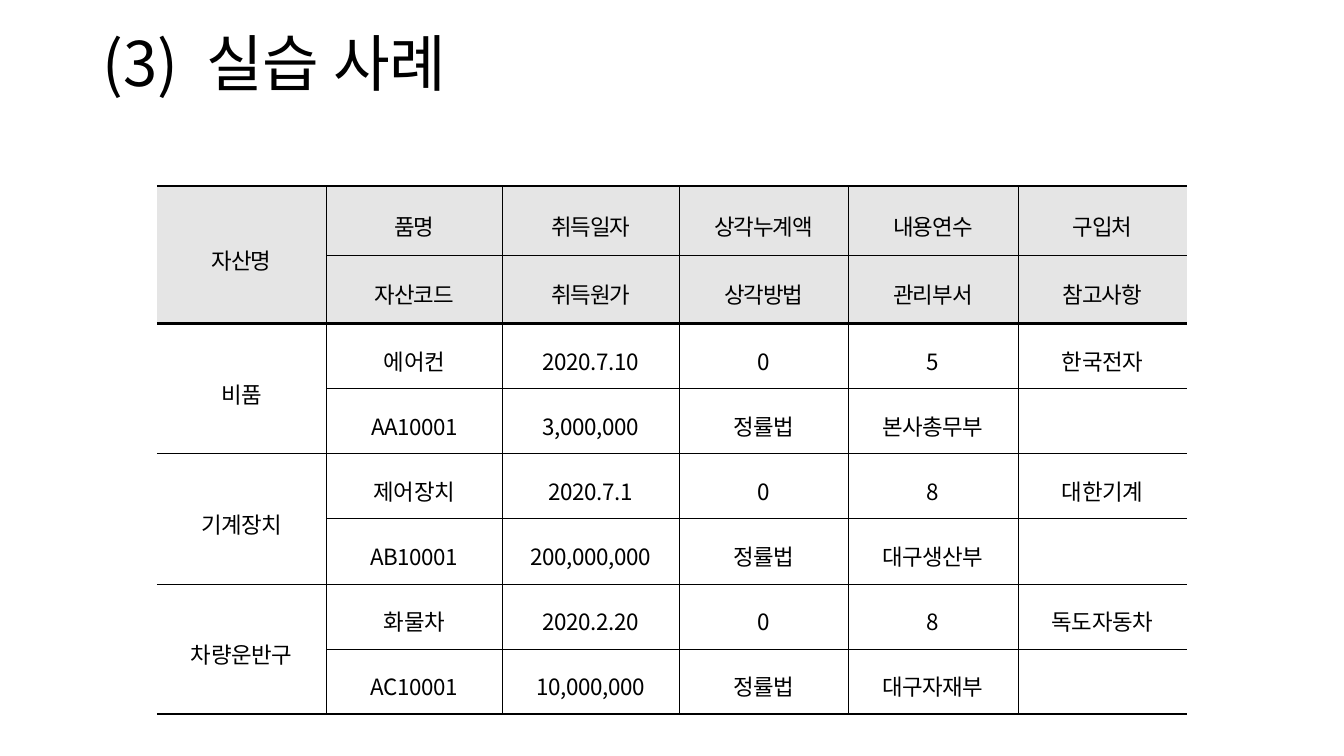
from dataclasses import dataclass

from lxml import etree
from pptx import Presentation
from pptx.dml.color import RGBColor
from pptx.enum.text import MSO_ANCHOR, PP_ALIGN
from pptx.oxml.ns import qn
from pptx.util import Pt

ANCHOR_TOP, ANCHOR_MIDDLE = MSO_ANCHOR.TOP, MSO_ANCHOR.MIDDLE
ALIGN_CENTER = PP_ALIGN.CENTER
BLANK_LAYOUT = 6


@dataclass(frozen=True)
class Theme:
    font: str = "Noto Sans CJK KR"
    ink: str = "000000"
    header_fill: str = "E5E5E5"
    body_fill: str = "FFFFFF"
    title_size: float = 44
    table_size: float = 16
    thin: float = 0.28
    frame: float = 1.7
    header_rule: float = 1.98


@dataclass(frozen=True)
class AssetGroup:
    """One asset name beside two rows of details."""
    name: str
    upper: tuple[str, ...]
    lower: tuple[str, ...]
    fill: str
    row_height: float
    spacing: float


THEME = Theme()
HEADER = (THEME.header_fill, 49, -0.7)
BODY = (THEME.body_fill, 46.5, -0.3)
GROUPS = (
    AssetGroup("자산명", ("품명", "취득일자", "상각누계액", "내용연수", "구입처"),
               ("자산코드", "취득원가", "상각방법", "관리부서", "참고사항"), *HEADER),
    AssetGroup("비품", ("에어컨", "2020.7.10", "0", "5", "한국전자"),
               ("AA10001", "3,000,000", "정률법", "본사총무부", ""), *BODY),
    AssetGroup("기계장치", ("제어장치", "2020.7.1", "0", "8", "대한기계"),
               ("AB10001", "200,000,000", "정률법", "대구생산부", ""), *BODY),
    AssetGroup("차량운반구", ("화물차", "2020.2.20", "0", "8", "독도자동차"),
               ("AC10001", "10,000,000", "정률법", "대구자재부", ""), *BODY),
)
COLUMN_WIDTHS = (121, 126, 126, 121, 121, 121)
TABLE_LEFT, TABLE_TOP = 112, 133
CELL_INSET = 1.4
ROW_COUNT = 2 * len(GROUPS)
# Horizontal rules heavier than the thin grid, by line number from the top
HEAVY_RULES = {0: THEME.frame, 2: THEME.header_rule, ROW_COUNT: THEME.frame}


def format_runs(paragraph, size: float, spacing: float = 0) -> None:
    for run in paragraph.runs:
        run.font.size = Pt(size)
        run.font.name = THEME.font
        run.font.color.rgb = RGBColor.from_string(THEME.ink)
        properties = run.font._element
        properties.set("spc", str(round(spacing * 100)))
        etree.SubElement(properties, qn("a:ea"), typeface=THEME.font)


def draw_title(slide) -> None:
    text_frame = slide.shapes.add_textbox(Pt(66), Pt(24), Pt(828), Pt(104)).text_frame
    text_frame.word_wrap = True
    text_frame.vertical_anchor = ANCHOR_TOP
    text_frame.margin_top = 0
    text_frame.text = "(3)"
    paragraph = text_frame.paragraphs[0]
    paragraph.line_spacing = 0.9
    gap = paragraph.add_run()
    gap.text = " "
    paragraph.add_run().text = "실습 사례"
    format_runs(paragraph, THEME.title_size)
    gap.font._element.set("spc", "1000")  # wider gap after the number


def set_borders(cell, widths: tuple[float, ...]) -> None:
    """Set left, right, top and bottom borders; zero means no line."""
    properties = cell._tc.get_or_add_tcPr()
    for position, (side, width) in enumerate(zip("LRTB", widths)):
        line = etree.Element(qn(f"a:ln{side}"), w=str(int(Pt(width))))
        if width:
            fill = etree.SubElement(line, qn("a:solidFill"))
            etree.SubElement(fill, qn("a:srgbClr"), val=THEME.ink)
        else:
            etree.SubElement(line, qn("a:noFill"))
        properties.insert(position, line)


def draw_cell(cell, text: str, group: AssetGroup, widths: tuple[float, ...]) -> None:
    cell.fill.solid()
    cell.fill.fore_color.rgb = RGBColor.from_string(group.fill)
    set_borders(cell, widths)
    cell.vertical_anchor = ANCHOR_MIDDLE
    cell.margin_left = cell.margin_right = Pt(CELL_INSET)
    cell.margin_top = cell.margin_bottom = Pt(CELL_INSET)
    cell.text_frame.text = text
    paragraph = cell.text_frame.paragraphs[0]
    paragraph.alignment = ALIGN_CENTER
    paragraph.line_spacing = 1.3
    format_runs(paragraph, THEME.table_size, group.spacing)


def draw_table(slide) -> None:
    height = sum(2 * group.row_height for group in GROUPS)
    table = slide.shapes.add_table(
        ROW_COUNT, len(COLUMN_WIDTHS), Pt(TABLE_LEFT), Pt(TABLE_TOP),
        Pt(sum(COLUMN_WIDTHS)), Pt(height)).table
    table.first_row = table.horz_banding = False
    for column, width in zip(table.columns, COLUMN_WIDTHS):
        column.width = Pt(width)

    last_column = len(COLUMN_WIDTHS) - 1
    for group_index, group in enumerate(GROUPS):
        first_row = 2 * group_index
        rows = ((group.name, *group.upper), ("", *group.lower))
        for row_index, texts in enumerate(rows, first_row):
            table.rows[row_index].height = Pt(group.row_height)
            for column_index, text in enumerate(texts):
                # The name cell spans both rows of its group
                is_name = column_index == 0
                top = first_row if is_name else row_index
                bottom = first_row + 2 if is_name else row_index + 1
                widths = (0 if is_name else THEME.thin,
                          0 if column_index == last_column else THEME.thin,
                          HEAVY_RULES.get(top, THEME.thin),
                          HEAVY_RULES.get(bottom, THEME.thin))
                draw_cell(table.cell(row_index, column_index), text, group, widths)
        table.cell(first_row, 0).merge(table.cell(first_row + 1, 0))


def main() -> None:
    presentation = Presentation()
    presentation.slide_width, presentation.slide_height = Pt(960), Pt(540)
    slide = presentation.slides.add_slide(presentation.slide_layouts[BLANK_LAYOUT])
    draw_title(slide)
    draw_table(slide)
    presentation.save("out.pptx")


if __name__ == "__main__":
    main()
